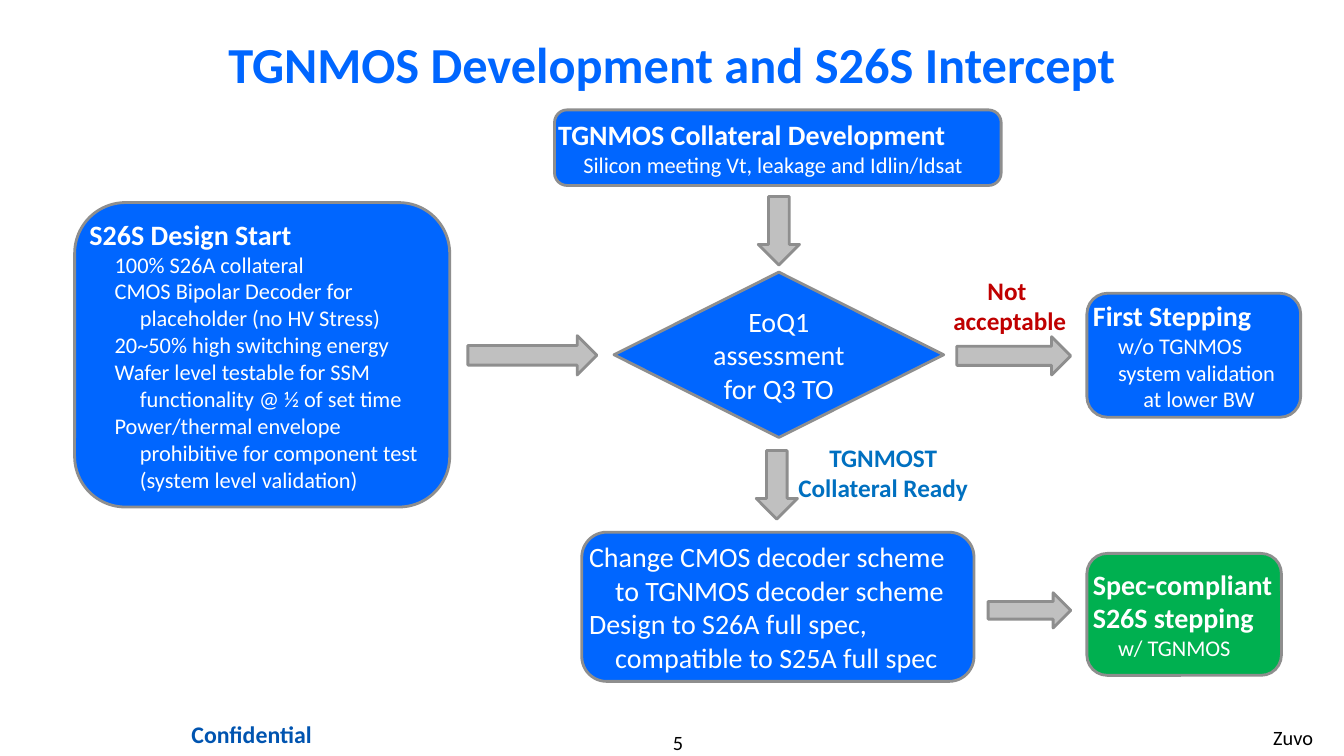
from dataclasses import dataclass

from pptx import Presentation
from pptx.dml.color import RGBColor
from pptx.enum.shapes import MSO_SHAPE
from pptx.enum.text import MSO_ANCHOR, PP_ALIGN
from pptx.util import Pt

PX = 9144  # EMU per px, 100 px to the inch
FONT = "Calibri"
BLUE = RGBColor(0x00, 0x66, 0xFF)
GREEN = RGBColor(0x00, 0xB0, 0x50)
SILVER = RGBColor(0xC0, 0xC0, 0xC0)
OUTLINE = RGBColor(0x8E, 0x8E, 0x8E)
WHITE = RGBColor(0xFF, 0xFF, 0xFF)
BLACK = RGBColor(0x00, 0x00, 0x00)
RED = RGBColor(0xC0, 0x00, 0x00)
READY_BLUE = RGBColor(0x00, 0x70, 0xC0)
FOOTER_BLUE = RGBColor(0x00, 0x54, 0xB0)


@dataclass(frozen=True)
class Line:
    text: str
    size: float = 20
    bold: bool = False
    left: int = 0
    first: int = 0


@dataclass(frozen=True)
class Area:
    left: int
    top: int
    width: int
    height: int

    def emu(self) -> tuple[int, ...]:
        return tuple(n * PX for n in (self.left, self.top, self.width, self.height))


@dataclass(frozen=True)
class Step:
    kind: MSO_SHAPE
    area: Area
    lines: tuple[Line, ...]
    fill: RGBColor = BLUE
    align: PP_ALIGN = PP_ALIGN.LEFT
    insets: tuple[int, int] = (0, 0)


@dataclass(frozen=True)
class Label:
    area: Area
    lines: tuple[Line, ...]
    color: RGBColor = BLACK
    align: PP_ALIGN = PP_ALIGN.CENTER
    insets: tuple[int, int] = (10, 5)
    wrap: bool = True


def heading(text: str, left: int = 0) -> Line:
    return Line(text, bold=True, left=left, first=-left)


def detail(text: str, first: int = -25) -> Line:
    return Line(text, 16, left=25 - first, first=first)


def body(text: str) -> Line:
    return Line(text, left=26, first=-26)


def label_lines(*texts: str) -> tuple[Line, ...]:
    return tuple(Line(text, 18, True) for text in texts)


STEPS = (
    Step(MSO_SHAPE.ROUNDED_RECTANGLE, Area(74, 201, 372, 302), (
        heading("S26S Design Start"),
        detail("100% S26A collateral"),
        detail("CMOS Bipolar Decoder for placeholder (no HV Stress)"),
        detail("20~50% high switching energy"),
        detail("Wafer level testable for SSM functionality @ ½ of set time"),
        detail("Power/thermal envelope prohibitive for component test "
               "(system level validation)"))),
    Step(MSO_SHAPE.ROUNDED_RECTANGLE, Area(550, 109, 443, 75), (
        heading("TGNMOS Collateral Development"),
        detail("Silicon meeting Vt, leakage and Idlin/Idsat"))),
    Step(MSO_SHAPE.ROUNDED_RECTANGLE, Area(577, 528, 389, 148), (
        body("Change CMOS decoder scheme to TGNMOS decoder scheme"),
        body("Design to S26A full spec, compatible to S25A full spec"))),
    Step(MSO_SHAPE.DIAMOND, Area(609, 270, 327, 164),
         (Line("EoQ1 assessment for Q3 TO"),),
         align=PP_ALIGN.CENTER, insets=(10, 5)),
    Step(MSO_SHAPE.ROUNDED_RECTANGLE, Area(1078, 291, 212, 123), (
        heading("First Stepping", 25),
        detail("w/o TGNMOS"),
        detail("system validation at lower BW"))),
    Step(MSO_SHAPE.ROUNDED_RECTANGLE, Area(1078, 549, 193, 121), (
        heading("Spec-compliant S26S stepping"),
        detail("w/ TGNMOS", 0)), fill=GREEN),
)
ARROWS = (
    (MSO_SHAPE.DOWN_ARROW, Area(752, 195, 41, 68)),
    (MSO_SHAPE.DOWN_ARROW, Area(750, 447, 41, 68)),
    (MSO_SHAPE.RIGHT_ARROW, Area(464, 333, 128, 39)),
    (MSO_SHAPE.RIGHT_ARROW, Area(949, 334, 113, 38)),
    (MSO_SHAPE.RIGHT_ARROW, Area(980, 588, 82, 35)),
)
LABELS = (
    Label(Area(917, 268, 169, 71), label_lines("Not ", "acceptable"), RED),
    Label(Area(781, 434, 190, 71), label_lines("TGNMOST", "Collateral Ready"),
          READY_BLUE, wrap=False),
    Label(Area(556, 724, 233, 24), (Line("5", 14.5),), insets=(0, 0)),
    Label(Area(1253, 715, 70, 35), (Line("Zuvo", 14.5),), align=PP_ALIGN.LEFT),
    Label(Area(155, 708, 189, 41), (Line("Confidential", 17, True),), FOOTER_BLUE,
          insets=(12, 6)),
)


def write(frame, lines: tuple[Line, ...], color: RGBColor, align: PP_ALIGN,
          insets: tuple[int, int], wrap: bool = True) -> None:
    frame.word_wrap = wrap
    frame.margin_left = frame.margin_right = insets[0] * PX
    frame.margin_top = frame.margin_bottom = insets[1] * PX
    for index, line in enumerate(lines):
        para = frame.add_paragraph() if index else frame.paragraphs[0]
        para.alignment = align
        if line.left:
            properties = para._p.get_or_add_pPr()
            properties.set("marL", str(line.left * PX))
            properties.set("indent", str(line.first * PX))
        span = para.add_run()
        span.text = line.text
        span.font.name = FONT
        span.font.size = Pt(line.size)
        span.font.bold = line.bold
        span.font.color.rgb = color


def add_outlined(page, kind: MSO_SHAPE, area: Area, fill: RGBColor):
    shape = page.shapes.add_shape(kind, *area.emu())
    shape.shadow.inherit = False
    shape.fill.solid()
    shape.fill.fore_color.rgb = fill
    shape.line.color.rgb = OUTLINE
    shape.line.width = Pt(2)
    return shape


def add_step(page, step: Step) -> None:
    frame = add_outlined(page, step.kind, step.area, step.fill).text_frame
    frame.vertical_anchor = MSO_ANCHOR.MIDDLE
    write(frame, step.lines, WHITE, step.align, step.insets)


def add_label(page, label: Label) -> None:
    box = page.shapes.add_textbox(*label.area.emu())
    write(box.text_frame, label.lines, label.color, label.align, label.insets, label.wrap)


def add_title(page) -> None:
    title = page.shapes.title
    title.left, title.top, title.width, title.height = Area(100, 17, 1133, 92).emu()
    title.text_frame.vertical_anchor = MSO_ANCHOR.MIDDLE
    write(title.text_frame, (Line("TGNMOS Development and S26S Intercept", 36, True),),
          BLUE, PP_ALIGN.CENTER, (10, 5))


def main() -> None:
    deck = Presentation()
    deck.slide_width, deck.slide_height = 1333 * PX, 750 * PX
    page = deck.slides.add_slide(deck.slide_layouts.get_by_name("Title Only"))
    add_title(page)
    for step in STEPS:
        add_step(page, step)
    for kind, area in ARROWS:
        add_outlined(page, kind, area, SILVER)
    for label in LABELS:
        add_label(page, label)
    deck.save("out.pptx")


if __name__ == "__main__":
    main()
